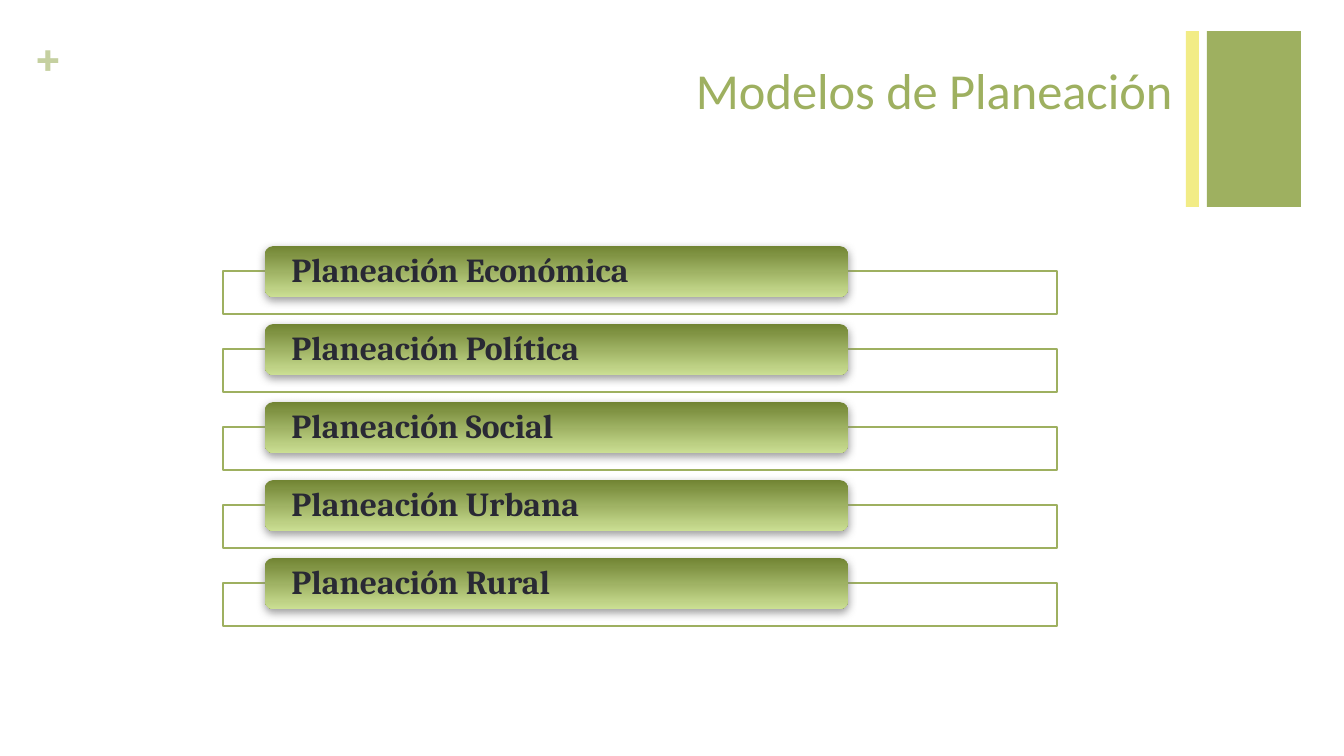
"""Builds the slide listing the planning models."""
from lxml import etree
from pptx import Presentation
from pptx.dml.color import RGBColor
from pptx.enum.shapes import MSO_SHAPE as SHAPE
from pptx.enum.text import MSO_ANCHOR as ANCHOR, PP_ALIGN as ALIGN
from pptx.oxml import parse_xml
from pptx.oxml.ns import nsdecls, qn
from pptx.util import Emu, Pt

GREEN = "9EB060"
YELLOW = "F2EC86"
MODELS = ["Económica", "Política", "Social", "Urbana", "Rural"]
STEP = 78
SHADOW = (
    f'<a:outerShdw {nsdecls("a")} blurRad="63500" dist="25400" dir="5400000" rotWithShape="0">'
    '<a:srgbClr val="808080"><a:alpha val="75000"/></a:srgbClr></a:outerShdw>'
)


def px(*lengths):
    return [Emu(round(n * 914400 / 121)) for n in lengths]


def rgb(color):
    return RGBColor.from_string(color)


prs = Presentation()
prs.slide_width, prs.slide_height = px(1344, 756)
s = prs.slides.add_slide(prs.slide_layouts[5])

for left, width, color in [(1207, 94, GREEN), (1186, 13, YELLOW)]:
    bar = s.shapes.add_shape(SHAPE.RECTANGLE, *px(left, 31, width, 176))
    bar.shadow.inherit = False
    bar.fill.solid()
    bar.fill.fore_color.rgb = rgb(color)
    bar.line.fill.background()

plus = s.shapes.add_textbox(*px(33, 25, 39, 60))
tf = plus.text_frame
tf.word_wrap = True
tf.margin_left = tf.margin_top = tf.margin_right = tf.margin_bottom = 0
tf.text = "+"
font = tf.paragraphs[0].runs[0].font
font.name, font.size, font.bold = "Cambria", Pt(30), True
font.color.rgb = rgb("C5D0A0")

title = s.shapes.title
title.left, title.top, title.width, title.height = px(74, 53, 1111, 124)
tf = title.text_frame
tf.text = "Modelos de Planeación"
tf.vertical_anchor = ANCHOR.TOP
p = tf.paragraphs[0]
p.alignment = ALIGN.RIGHT
font = p.runs[0].font
font.name, font.size = "Calibri", Pt(30)
font.color.rgb = rgb(GREEN)

for i, model in enumerate(MODELS):
    frame = s.shapes.add_shape(SHAPE.RECTANGLE, *px(223, 271 + i * STEP, 834, 43))
    frame.shadow.inherit = False
    frame.fill.solid()
    frame.fill.fore_color.rgb = rgb("FFFFFF")
    white = frame.fill._xPr.find(qn("a:solidFill"))[0]
    etree.SubElement(white, qn("a:alpha")).set("val", "90000")
    frame.line.color.rgb = rgb(GREEN)
    frame.line.width = Pt(1)

    pill = s.shapes.add_shape(SHAPE.ROUNDED_RECTANGLE, *px(265, 246 + i * STEP, 583, 51))
    pill.shadow.inherit = False
    pill.fill.gradient()
    pill.fill.gradient_angle = 270
    for stop, color in zip(pill.fill.gradient_stops, ["718433", "CBDF93"]):
        stop.color.rgb = rgb(color)
    pill.line.fill.background()
    pill._element.spPr.find(qn("a:effectLst")).append(parse_xml(SHADOW))

    tf = pill.text_frame
    tf.margin_left, tf.margin_right = px(24, 24)
    tf.margin_top = tf.margin_bottom = 0
    tf.vertical_anchor = ANCHOR.MIDDLE
    tf.text = f"Planeación {model}"
    p = tf.paragraphs[0]
    p.alignment = ALIGN.LEFT
    p.line_spacing = 0.9
    font = p.runs[0].font
    font.name, font.size, font.bold = "Cambria", Pt(20), True
    font.color.rgb = rgb("292934")

prs.save("out.pptx")
